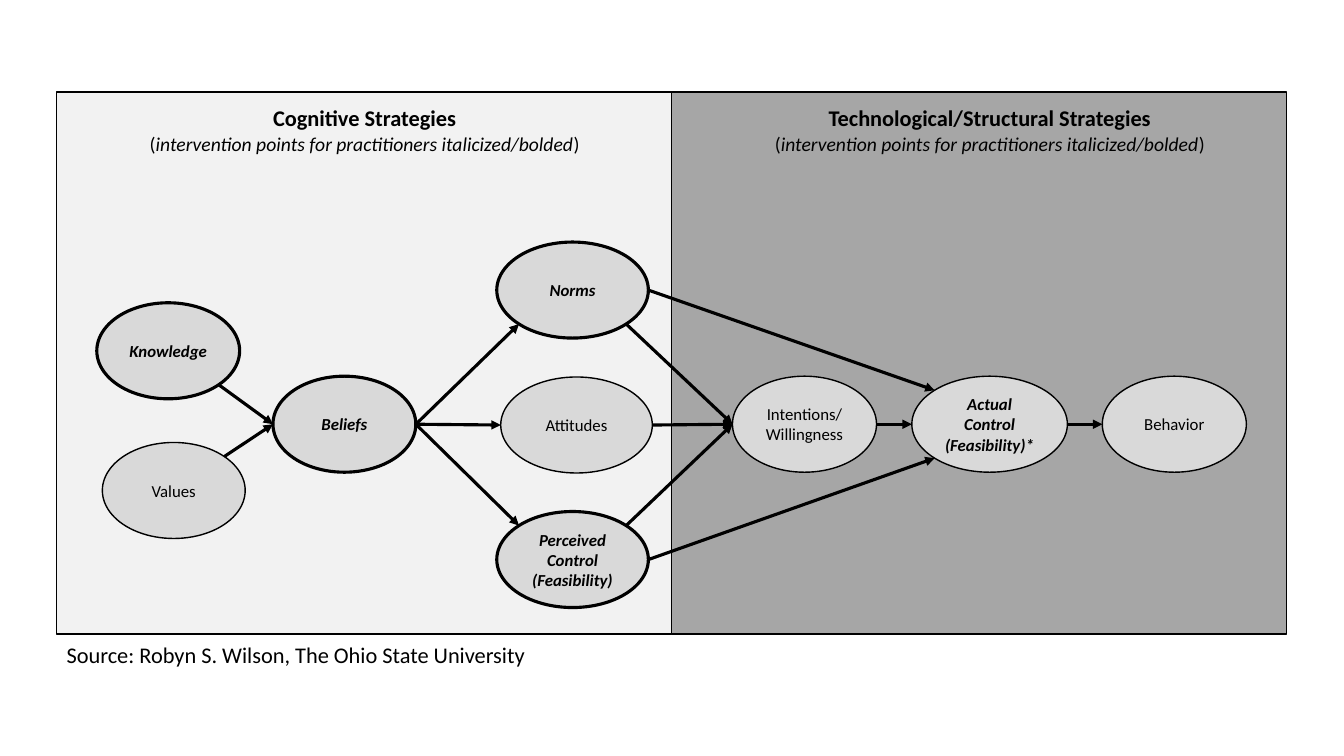
from lxml import etree
from pptx import Presentation
from pptx.dml.color import RGBColor
from pptx.enum.shapes import MSO_CONNECTOR, MSO_SHAPE
from pptx.enum.text import MSO_ANCHOR, MSO_AUTO_SIZE, PP_ALIGN
from pptx.oxml.ns import qn
from pptx.util import Cm, Pt

RECTANGLE, ELLIPSE = MSO_SHAPE.RECTANGLE, MSO_SHAPE.OVAL
STRAIGHT = MSO_CONNECTOR.STRAIGHT
LEFT, CENTER = PP_ALIGN.LEFT, PP_ALIGN.CENTER
MIDDLE, GROW = MSO_ANCHOR.MIDDLE, MSO_AUTO_SIZE.SHAPE_TO_FIT_TEXT

COLORS = {"ink": "000000", "cognitive": "F2F2F2", "structural": "A6A6A6", "node": "D9D9D9"}
THIN, THICK = 1, 2.25
NODE_HEIGHT = 2.42

# Connection sites of an ellipse: index, then offset from the centre in half sizes
DIAGONAL = 0.5 ** 0.5
SITES = {
    "left": (2, -1, 0),
    "right": (6, 1, 0),
    "top left": (1, -DIAGONAL, -DIAGONAL),
    "bottom left": (3, -DIAGONAL, DIAGONAL),
    "bottom right": (5, DIAGONAL, DIAGONAL),
    "top right": (7, DIAGONAL, -DIAGONAL),
}


def color(name):
    return RGBColor.from_string(COLORS[name])


class DiagramPage:
    """Holds the text style and the current slide."""

    def __init__(self, page, font="Calibri"):
        self.page = page
        self.font = font

    def fill_text(self, frame, paragraphs, align):
        """Each paragraph is a list of (text, font format) pairs."""
        for number, spans in enumerate(paragraphs):
            para = frame.add_paragraph() if number else frame.paragraphs[0]
            para.alignment = align
            for text, style in spans:
                span = para.add_run()
                span.text = text
                span.font.color.rgb = color("ink")
                for name, value in {"name": self.font, **style}.items():
                    setattr(span.font, name, value)

    def shape(self, kind, left, top, width, height, fill, weight):
        shape = self.page.shapes.add_shape(kind, Cm(left), Cm(top), Cm(width), Cm(height))
        shape.shadow.inherit = False
        shape.fill.solid()
        shape.fill.fore_color.rgb = color(fill)
        shape.line.color.rgb = color("ink")
        shape.line.width = Pt(weight)
        return shape

    def node(self, lines, left, top, width, emphasis):
        weight = THICK if emphasis == "outlined" else THIN
        node = self.shape(ELLIPSE, left, top, width, NODE_HEIGHT, "node", weight)
        frame = node.text_frame
        frame.word_wrap = True
        frame.vertical_anchor = MIDDLE
        style = {"size": Pt(12), "bold": bool(emphasis), "italic": bool(emphasis)}
        self.fill_text(frame, [[(line, style)] for line in lines], CENTER)
        return node

    def arrow(self, source, source_site, target, target_site):
        ends = []
        for node, site in ((source, source_site), (target, target_site)):
            _, across, down = SITES[site]
            ends += [int(node.left + node.width * (1 + across) / 2),
                     int(node.top + node.height * (1 + down) / 2)]
        arrow = self.page.shapes.add_connector(STRAIGHT, *ends)
        arrow.line.color.rgb = color("ink")
        arrow.line.width = Pt(THICK)
        line = arrow.element.find(".//" + qn("a:ln"))
        etree.SubElement(line, qn("a:tailEnd"), type="triangle")
        etree.SubElement(arrow.element.spPr, qn("a:effectLst"))
        # Glue both ends to the ellipses
        links = arrow.element.find(".//" + qn("p:cNvCxnSpPr"))
        for tag, node, site in (("a:stCxn", source, source_site), ("a:endCxn", target, target_site)):
            etree.SubElement(links, qn(tag), id=str(node.shape_id), idx=str(SITES[site][0]))

    def text(self, paragraphs, left, top, width, height, align, wrap=True):
        box = self.page.shapes.add_textbox(Cm(left), Cm(top), Cm(width), Cm(height))
        box.text_frame.word_wrap = wrap
        box.text_frame.auto_size = GROW
        self.fill_text(box.text_frame, paragraphs, align)


def main():
    deck = Presentation()
    deck.slide_width, deck.slide_height = Cm(33.87), Cm(19.05)
    diagram = DiagramPage(deck.slides.add_slide(deck.slide_layouts[6]))

    # Background panels
    panel_left, panel_width = 1.43, 15.5
    for column, fill in enumerate(("cognitive", "structural")):
        diagram.shape(RECTANGLE, panel_left + column * panel_width, 2.32,
                      panel_width, 13.66, fill, THIN)

    # Nodes: lines, left, top, width, emphasis
    middle = 9.48
    node_rows = {
        "knowledge": (["Knowledge"], 2.44, 7.63, 3.6, "outlined"),
        "values": (["Values"], 2.58, 11.15, 3.6, None),
        "beliefs": (["Beliefs"], 6.88, middle, 3.6, "outlined"),
        "norms": (["Norms"], 12.52, 6.1, 3.82, "outlined"),
        "attitudes": (["Attitudes"], 12.62, 9.5, 3.82, None),
        "perceived": (["Perceived Control", "(Feasibility)"], 12.52, 12.89, 3.82, "outlined"),
        "intentions": (["Intentions/Willingness"], 18.46, middle, 3.63, None),
        "actual": (["Actual Control (Feasibility)*"], 22.98, middle, 3.92, "text only"),
        "behavior": (["Behavior"], 27.78, middle, 3.63, None),
    }
    nodes = {name: diagram.node(*row) for name, row in node_rows.items()}

    # Arrows
    for source, source_site, target, target_site in (
        ("knowledge", "bottom right", "beliefs", "left"),
        ("values", "top right", "beliefs", "left"),
        ("beliefs", "right", "norms", "bottom left"),
        ("beliefs", "right", "attitudes", "left"),
        ("beliefs", "right", "perceived", "top left"),
        ("norms", "bottom right", "intentions", "left"),
        ("attitudes", "right", "intentions", "left"),
        ("perceived", "top right", "intentions", "left"),
        ("norms", "right", "actual", "top left"),
        ("perceived", "right", "actual", "bottom left"),
        ("intentions", "right", "actual", "left"),
        ("actual", "right", "behavior", "left"),
    ):
        diagram.arrow(nodes[source], source_site, nodes[target], target_site)

    # Panel headings
    plain = {"size": Pt(14)}
    note = [("(", plain),
            ("intervention points for practitioners italicized/bolded", {**plain, "italic": True}),
            (")", plain)]
    for title, left, width in (("Cognitive Strategies", 2.84, 12.7),
                               ("Technological/Structural Strategies", 17.91, 14.07)):
        heading = [(title, {"size": Pt(16), "bold": True})]
        diagram.text([heading, note], left, 2.51, width, 1.55, CENTER)

    # Source line
    source_line = [("Source: Robyn S. Wilson, The Ohio State University", {"size": Pt(16)})]
    diagram.text([source_line], panel_left, 16.03, 12.22, 0.94, LEFT, wrap=False)

    deck.save("out.pptx")


if __name__ == "__main__":
    main()
